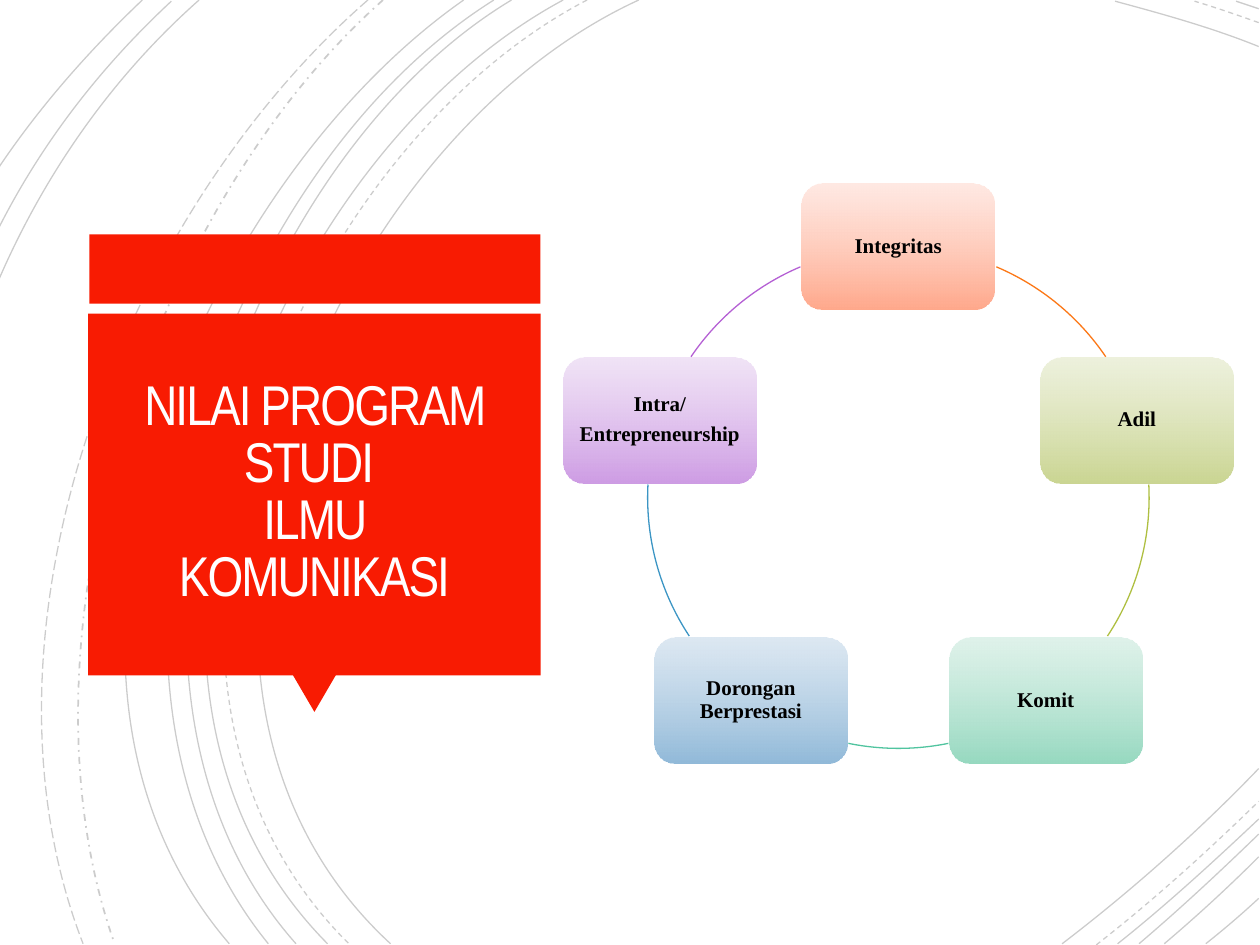
"""Builds a value slide: a red title panel beside a ring of five values."""
from math import cos, radians, sin, tan

from lxml.etree import SubElement
from pptx import Presentation
from pptx.dml.color import RGBColor
from pptx.enum.dml import MSO_LINE as Dash
from pptx.enum.shapes import MSO_SHAPE as Kind
from pptx.enum.text import MSO_ANCHOR as Anchor, PP_ALIGN as Align
from pptx.oxml.ns import qn
from pptx.util import Inches, Pt

RED = "F81B02"
SOLID, DASH, DOT, LONG = Dash.SOLID, Dash.DASH, Dash.DASH_DOT, Dash.LONG_DASH

SWEEPS = [
    (SOLID, (5.07, 0), (2.56, 1.15), (0.83, 5.4), (3.1, 7.49)),
    (SOLID, (9.99, 0.37), (9.62, 0.22), (9.22, 0.11), (8.85, 0.01)),
    (SOLID, (8.43, 7.49), (8.98, 7.07), (9.51, 6.6), (9.99, 6.1)),
    (DASH, (4.66, 0), (2.26, 1.25), (0.63, 5.38), (2.77, 7.49)),
    (DASH, (9.99, 0.18), (9.82, 0.12), (9.65, 0.06), (9.48, 0.01)),
    (DASH, (8.7, 7.5), (9.15, 7.15), (9.58, 6.76), (9.99, 6.36)),
    (SOLID, (4.47, 0), (2.11, 1.27), (0.5, 5.37), (2.6, 7.49)),
    (SOLID, (9.99, 0.07), (9.93, 0.05), (9.87, 0.03), (9.81, 0.01)),
    (SOLID, (8.87, 7.49), (9.26, 7.18), (9.63, 6.84), (9.99, 6.5)),
    (SOLID, (4.06, 0), (1.85, 1.33), (0.5, 5.41), (2.35, 7.49)),
    (SOLID, (9.04, 7.49), (9.37, 7.21), (9.68, 6.92), (9.99, 6.62)),
    (SOLID, (3.92, 0), (1.72, 1.38), (0.38, 5.34), (2.13, 7.49)),
    (SOLID, (9.24, 7.49), (9.5, 7.27), (9.75, 7.04), (9.99, 6.8)),
    (SOLID, (3.68, 0), (1.58, 1.47), (-0.07, 5.29), (1.82, 7.49)),
    (SOLID, (9.57, 7.49), (9.71, 7.38), (9.85, 7.26), (9.99, 7.13)),
    (DOT, (3.04, 0), (1.17, 1.66), (0.06, 5.09), (0.91, 7.49)),
    (LONG, (2.92, 0), (0.98, 1.69), (-0.31, 4.99), (0.66, 7.49)),
    (SOLID, (1.58, 0), (0.88, 0.62), (0.35, 1.39), (-0.01, 2.22)),
    (SOLID, (1.36, 0.01), (0.79, 0.54), (0.33, 1.14), (-0.01, 1.81)),
    (SOLID, (1.13, 0), (0.71, 0.4), (0.32, 0.84), (-0.01, 1.33)),
]

VALUES = [
    (["Integritas"], "FFDAD0", "FFA182", "FC7715", 23, 55.8),
    (["Adil"], "E2E8C6", "C6D289", "AFBF41", 87, 123.5),
    (["Komit"], "CAEADD", "8ED6BB", "50C49F", 168.5, 191.5),
    (["Dorongan Berprestasi"], "C6D9EA", "88B4D6", "3B95C4", 236.5, 273),
    (["Intra/", "Entrepreneurship"], "E7D1F1", "CA94E2", "B560D4", 304.2, 337),
]


def tint(code):
    return RGBColor.from_string(code)


def fade(shape, *shares):
    for node, share in zip(shape._element.spPr.iter(qn("a:srgbClr")), shares):
        SubElement(node, qn("a:alpha")).set("val", str(share * 1000))


def write(shape, lines, font, size, color, bold=False, inset=0.05, lead=1.0, after=0, track=0):
    frame = shape.text_frame
    frame.word_wrap = True
    frame.vertical_anchor = Anchor.MIDDLE
    frame.margin_left = frame.margin_right = Inches(inset)
    frame.margin_top = frame.margin_bottom = Inches(inset)
    frame.text = "\n".join(lines)
    for para in frame.paragraphs:
        para.alignment = Align.CENTER
        para.line_spacing = lead
        para.space_after = Pt(after)
        for run in para.runs:
            run.font.name, run.font.size, run.font.bold = font, Pt(size), bold
            run.font.color.rgb = tint(color)
            if track:
                run._r.get_or_add_rPr().set("spc", str(track))


class Deck:
    def __init__(self):
        self.show = Presentation()
        self.show.slide_width, self.show.slide_height = Inches(10), Inches(7.5)
        self.slide = self.show.slides.add_slide(self.show.slide_layouts[6])

    def block(self, kind, x, y, w, h, fill, turn=0):
        shape = self.slide.shapes.add_shape(kind, Inches(x), Inches(y), Inches(w), Inches(h))
        shape.shadow.inherit = False
        shape.line.fill.background()
        shape.rotation = turn
        if isinstance(fill, str):
            shape.fill.solid()
            shape.fill.fore_color.rgb = tint(fill)
        else:
            shape.fill.gradient()
            shape.fill.gradient_angle = 270
            for stop, code in zip(shape.fill.gradient_stops, fill):
                stop.color.rgb = tint(code)
        return shape

    def label(self, x, y, w, h, lines, **style):
        box = self.slide.shapes.add_textbox(Inches(x), Inches(y), Inches(w), Inches(h))
        write(box, lines, **style)

    def curve(self, knots, color, width=0.75, dash=SOLID, frame=None):
        xs, ys = zip(*(frame or knots))
        left, top = Inches(min(xs)), Inches(min(ys))
        pen = self.slide.shapes.build_freeform(left, top)
        pen.add_line_segments([(Inches(max(xs)), Inches(max(ys)))], close=False)
        shape = pen.convert_to_shape()
        track = next(shape._element.spPr.iter(qn("a:path")))
        for step in list(track):
            track.remove(step)
        for tag, spots in (("a:moveTo", knots[:1]), ("a:cubicBezTo", knots[1:])):
            step = SubElement(track, qn(tag))
            for x, y in spots:
                SubElement(step, qn("a:pt"), x=str(Inches(x) - left), y=str(Inches(y) - top))
        shape.shadow.inherit = False
        shape.fill.background()
        shape.line.color.rgb = tint(color)
        shape.line.width = Pt(width)
        shape.line.dash_style = dash
        return shape


class Ring:
    """Places points on the circle of values, in degrees clockwise from the top."""

    x, y, size = 7.13, 3.95, 1.99

    def spot(self, deg):
        turn = radians(deg)
        return self.x + self.size * sin(turn), self.y - self.size * cos(turn)

    def frame(self):
        return [(self.x + side * self.size, self.y + side * self.size) for side in (-1, 1)]

    def arc(self, start, end):
        """Return the four knots of the cubic that follows the circle."""
        reach = self.size * tan(radians(end - start) / 4) * 4 / 3
        knots = [self.spot(start), self.spot(end)]
        for i, (deg, way) in enumerate(((start, reach), (end, -reach))):
            x, y = self.spot(deg)
            knots.insert(i + 1, (x + way * cos(radians(deg)), y + way * sin(radians(deg))))
        return knots


def main():
    deck, ring = Deck(), Ring()
    for dash, *knots in SWEEPS:
        line = deck.curve(knots, "000000", 1 if dash == DOT else 0.75, dash)
        fade(line, 20)

    deck.block(Kind.RECTANGLE, 0.71, 1.86, 3.58, 0.55, RED)
    deck.block(Kind.ISOSCELES_TRIANGLE, 2.32, 5.35, 0.35, 0.3, RED, turn=180)
    deck.block(Kind.RECTANGLE, 0.7, 2.49, 3.59, 2.87, RED)
    deck.label(0.79, 2.57, 3.41, 2.7, ["NILAI PROGRAM STUDI \vILMU KOMUNIKASI"],
               font="Arial Narrow", size=32, color="FFFEFF", inset=0.25, lead=0.85, track=-110)

    wide, high = 1.53, 1
    for i, (lines, light, deep, edge, start, end) in enumerate(VALUES):
        x, y = ring.spot(i * 360 / len(VALUES))
        card = deck.block(Kind.ROUNDED_RECTANGLE, x - wide / 2, y - high / 2, wide, high, (light, deep))
        fade(card, 60, 92)
        write(card, lines, "Times New Roman", 12, "000000", bold=True, lead=0.9, after=4.2)
        deck.curve(ring.arc(start, end), edge, frame=ring.frame())

    deck.show.save("out.pptx")


if __name__ == "__main__":
    main()
